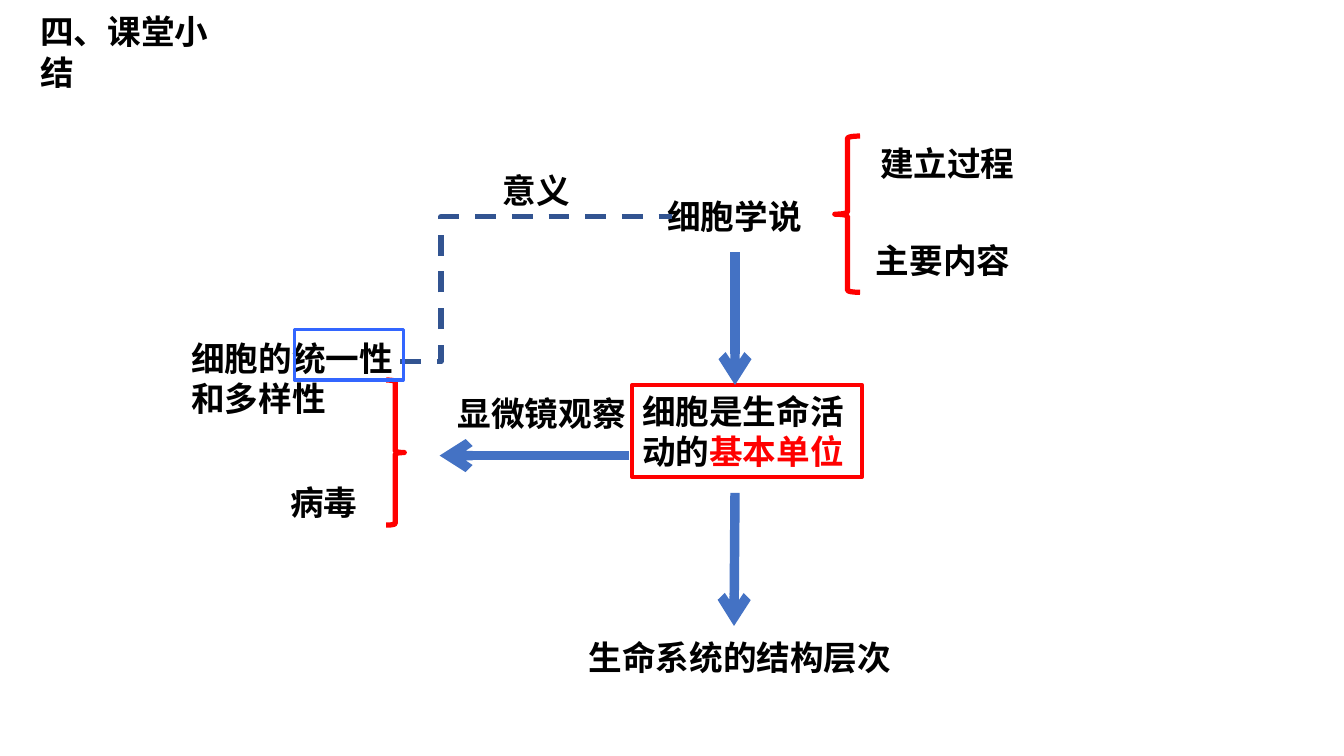
from pptx import Presentation
from pptx.dml.color import RGBColor
from pptx.enum.dml import MSO_LINE
from pptx.enum.shapes import MSO_CONNECTOR, MSO_SHAPE
from pptx.enum.text import MSO_ANCHOR, MSO_AUTO_SIZE, PP_ALIGN
from pptx.oxml.ns import qn
from pptx.util import Inches, Pt
from lxml.etree import SubElement


def color(hex_string):
    """Return the colour for a hex string."""
    return RGBColor.from_string(hex_string)


class SummarySlide:
    """Hold the style and the slide, and draw each kind of element."""

    font_name = "Noto Sans CJK SC"
    font_size = 24
    black = "000000"
    red = "FF0000"
    arrow_blue = "4472C4"
    dash_blue = "325491"
    frame_blue = "3366FF"

    def __init__(self, presentation):
        """Add a title-only slide."""
        self.slide = presentation.slides.add_slide(presentation.slide_layouts[5])

    def set_text(self, shape, runs, anchor=MSO_ANCHOR.TOP, wrap=True):
        """Put (text, colour) runs into a shape as one bold paragraph."""
        frame = shape.text_frame
        frame.word_wrap = wrap
        frame.auto_size = MSO_AUTO_SIZE.NONE
        frame.vertical_anchor = anchor
        paragraph = frame.paragraphs[0]
        paragraph.alignment = PP_ALIGN.LEFT
        font = paragraph.font
        font.size = Pt(self.font_size)
        font.bold = True
        font.color.rgb = color(self.black)
        font.name = self.font_name
        defaults = paragraph._p.pPr.find(qn("a:defRPr"))
        SubElement(defaults, qn("a:ea"), typeface=self.font_name)
        for text, run_color in runs:
            run = paragraph.add_run()
            run.text = text
            if run_color != self.black:
                run.font.color.rgb = color(run_color)

    def title(self, text, left, top, width, height):
        """Place and format the title placeholder."""
        shape = self.slide.shapes.title
        shape.left, shape.top = Inches(left), Inches(top)
        shape.width, shape.height = Inches(width), Inches(height)
        self.set_text(shape, [(text, self.black)], wrap=False)

    def label(self, text, left, top, width, height=0.5):
        """Add a text box."""
        box = self.slide.shapes.add_textbox(
            Inches(left), Inches(top), Inches(width), Inches(height))
        self.set_text(box, [(text, self.black)])

    def outline(self, kind, left, top, width, height, line_color, weight):
        """Add an unfilled preset shape."""
        shape = self.slide.shapes.add_shape(
            kind, Inches(left), Inches(top), Inches(width), Inches(height))
        shape.shadow.inherit = False
        shape.fill.background()
        shape.line.color.rgb = color(line_color)
        shape.line.width = Pt(weight)
        return shape

    def connector(self, kind, start, end, line_color, weight):
        """Add a connector without a shadow."""
        connector = self.slide.shapes.add_connector(
            kind, *(Inches(length) for length in start + end))
        connector.line.color.rgb = color(line_color)
        connector.line.width = Pt(weight)
        SubElement(connector._element.spPr, qn("a:effectLst"))
        return connector

    def arrow(self, start, end):
        """Add a thick straight arrow."""
        connector = self.connector(
            MSO_CONNECTOR.STRAIGHT, start, end, self.arrow_blue, 6.75)
        line = connector._element.spPr.find(qn("a:ln"))
        SubElement(line, qn("a:tailEnd"), type="arrow")

    def dashed_elbow(self, start, end, bend):
        """Add a dashed elbow that turns at the given share of its width."""
        connector = self.connector(
            MSO_CONNECTOR.ELBOW, start, end, self.dash_blue, 3.75)
        connector.line.dash_style = MSO_LINE.DASH
        geometry = connector._element.spPr.find(qn("a:prstGeom"))
        guides = geometry.find(qn("a:avLst"))
        SubElement(guides, qn("a:gd"), name="adj1", fmla=f"val {round(bend * 100000)}")


def main():
    """Build the lesson summary."""
    presentation = Presentation()
    presentation.slide_width = Inches(13.33)
    presentation.slide_height = Inches(7.5)
    summary = SummarySlide(presentation)

    summary.title("四、课堂小结", 0.3, 0.06, 2.2, 0.5)
    basic_unit = summary.outline(
        MSO_SHAPE.RECTANGLE, 6.27, 3.82, 2.28, 0.91, summary.red, 3)
    summary.set_text(
        basic_unit,
        [("细胞是生命活动的", summary.black), ("基本单位", summary.red)],
        anchor=MSO_ANCHOR.MIDDLE)

    for label in (
        ("细胞学说", 6.52, 1.89, 1.53),
        ("生命系统的结构层次", 5.74, 6.27, 3.5),
        ("显微镜观察", 4.44, 3.85, 1.95),
        ("病毒", 2.78, 4.73, 1.06),
        ("细胞的统一性和多样性", 1.8, 3.3, 2.22, 0.91),
        ("建立过程", 8.63, 1.37, 1.53),
        ("主要内容", 8.59, 2.33, 1.53),
        ("意义", 4.89, 1.64, 1.06),
    ):
        summary.label(*label)

    summary.outline(MSO_SHAPE.RIGHT_BRACE, 3.83, 3.77, 0.18, 1.44, summary.red, 3.75)
    summary.outline(MSO_SHAPE.LEFT_BRACE, 8.28, 1.35, 0.25, 1.55, summary.red, 3.75)

    for start, end in (
        ((6.24, 4.52), (4.36, 4.52)),
        ((7.29, 2.5), (7.29, 3.82)),
        ((7.29, 4.89), (7.28, 6.21)),
    ):
        summary.arrow(start, end)

    summary.dashed_elbow((3.97, 3.59), (6.66, 2.15), 0.15)
    summary.outline(
        MSO_SHAPE.RECTANGLE, 2.92, 3.27, 1.08, 0.5, summary.frame_blue, 2.25)
    presentation.save("out.pptx")


if __name__ == "__main__":
    main()
